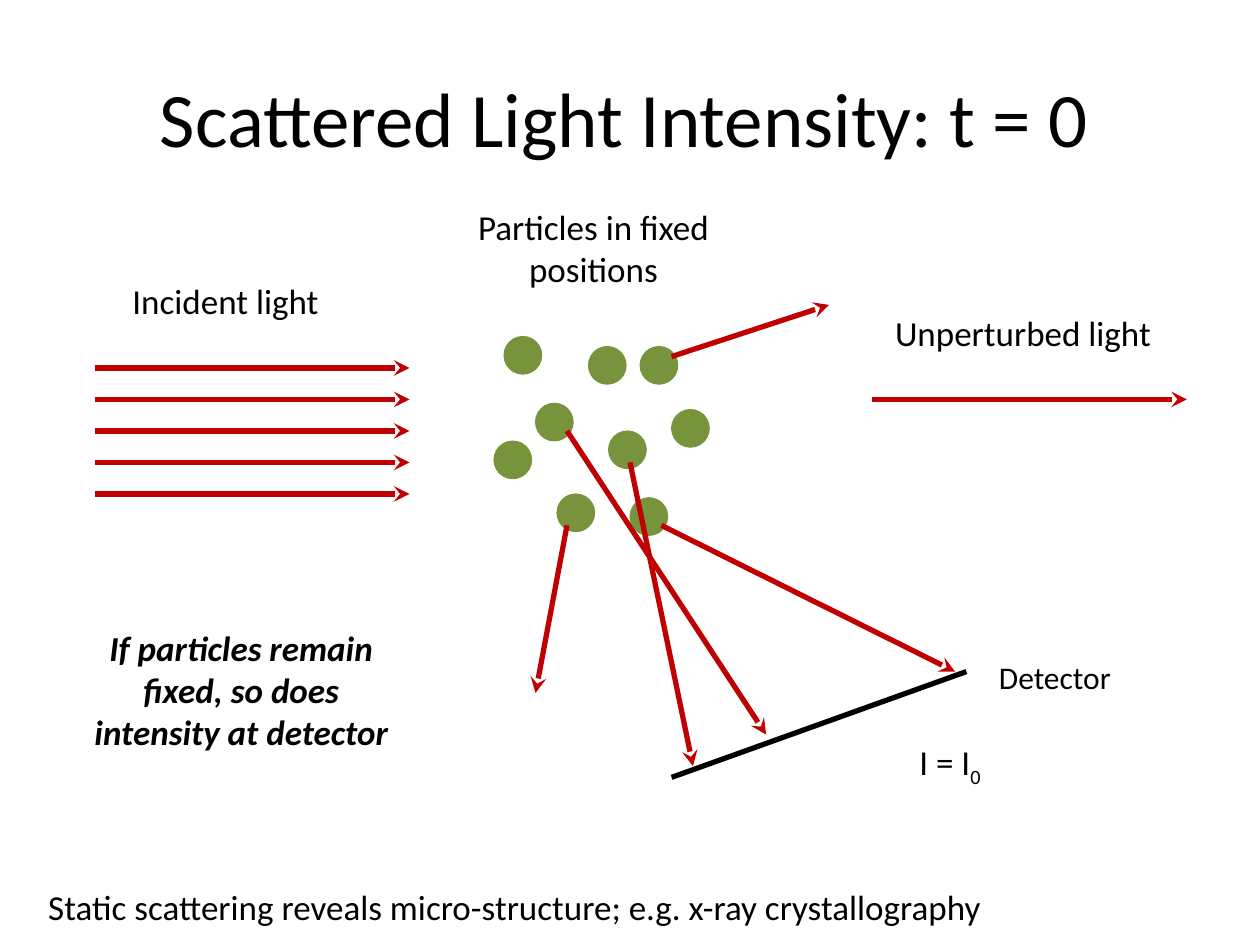
from lxml import etree
from pptx import Presentation
from pptx.dml.color import RGBColor
from pptx.enum import shapes, text
from pptx.oxml.ns import qn
from pptx.util import Inches, Pt

FONT = "Calibri"
BLACK, RED, GREEN = "000000", "C00000", "77933C"
PARTICLE_SIZE = 0.3

PARTICLES = [(4, 2.67), (4.25, 3.2), (4.83, 3.42), (4.67, 2.75), (3.92, 3.5),
             (5, 3.95), (5.08, 2.75), (5.33, 3.25), (4.42, 3.92)]
SCATTERED_RAYS = [((5.25, 4.17), (7.58, 5.33)), ((4.5, 4.17), (4.25, 5.5)),
                  ((5, 3.67), (5.5, 6.08)), ((4.5, 3.42), (6.08, 5.83)),
                  ((5.33, 2.83), (6.58, 2.42))]


def color(hex_value):
    return RGBColor.from_string(hex_value)


def add_label(slide, box, words, size=20, align=text.PP_ALIGN.CENTER,
              anchor=text.MSO_ANCHOR.TOP, emphasis=False, wrap=True):
    frame = slide.shapes.add_textbox(*map(Inches, box)).text_frame
    frame.word_wrap = wrap
    frame.vertical_anchor = anchor
    paragraph = frame.paragraphs[0]
    paragraph.text = words
    paragraph.alignment = align
    font = paragraph.font
    font.name, font.size = FONT, Pt(size)
    font.color.rgb = color(BLACK)
    if emphasis:
        font.bold = font.italic = True
    return paragraph


def add_subscript(paragraph, words):
    run = paragraph.add_run()
    run.text = words
    run.font._element.set("baseline", "-25000")


def add_particle(slide, left, top):
    particle = slide.shapes.add_shape(
        shapes.MSO_SHAPE.OVAL, Inches(left), Inches(top),
        Inches(PARTICLE_SIZE), Inches(PARTICLE_SIZE))
    particle.shadow.inherit = False
    particle.fill.solid()
    particle.fill.fore_color.rgb = color(GREEN)
    particle.line.color.rgb = color(GREEN)
    particle.line.width = Pt(0.5)


def add_line(slide, start, end, hex_value):
    line = slide.shapes.add_connector(
        shapes.MSO_CONNECTOR.STRAIGHT, *map(Inches, (*start, *end)))
    line.line.color.rgb = color(hex_value)
    line.line.width = Pt(3)
    etree.SubElement(line._element.spPr, qn("a:effectLst"))
    return line


def add_ray(slide, start, end):
    ray = add_line(slide, start, end, RED)
    etree.SubElement(ray.line._get_or_add_ln(), qn("a:tailEnd"), type="stealth")


def main():
    prs = Presentation()
    prs.slide_width, prs.slide_height = Inches(10), Inches(7.5)
    slide = prs.slides.add_slide(prs.slide_layouts[6])

    add_label(slide, (0.08, 0.3, 9.75, 1.25), "Scattered Light Intensity: t = 0",
              size=44, anchor=text.MSO_ANCHOR.MIDDLE)

    # Particles
    for left, top in PARTICLES:
        add_particle(slide, left, top)
    add_label(slide, (3.42, 1.58, 2.58, 0.77), "Particles in fixed positions")

    # Incident and unperturbed light
    for i in range(5):
        y = 2.92 + 0.25 * i
        add_ray(slide, (0.75, y), (3.25, y))
    add_label(slide, (0.5, 2.17, 2.58, 0.44), "Incident light")
    add_ray(slide, (6.92, 3.17), (9.42, 3.17))
    add_label(slide, (6.83, 2.42, 2.58, 0.44), "Unperturbed light")

    # Detector and scattered light
    add_line(slide, (5.33, 6.17), (7.67, 5.33), BLACK)
    for start, end in SCATTERED_RAYS:
        add_ray(slide, start, end)
    add_label(slide, (7.83, 5.17, 1.1, 0.4), "Detector", size=18,
              align=text.PP_ALIGN.LEFT, wrap=False)
    intensity = add_label(slide, (6.5, 5.83, 2.08, 0.44), "I = I")
    add_subscript(intensity, "0")

    # Conclusions
    add_label(slide, (0.58, 4.92, 2.67, 1.11),
              "If particles remain fixed, so does intensity at detector",
              emphasis=True)
    add_label(slide, (0.17, 6.98, 7.83, 0.44),
              "Static scattering reveals micro-structure; e.g. x-ray crystallography")

    prs.save("out.pptx")


if __name__ == "__main__":
    main()
